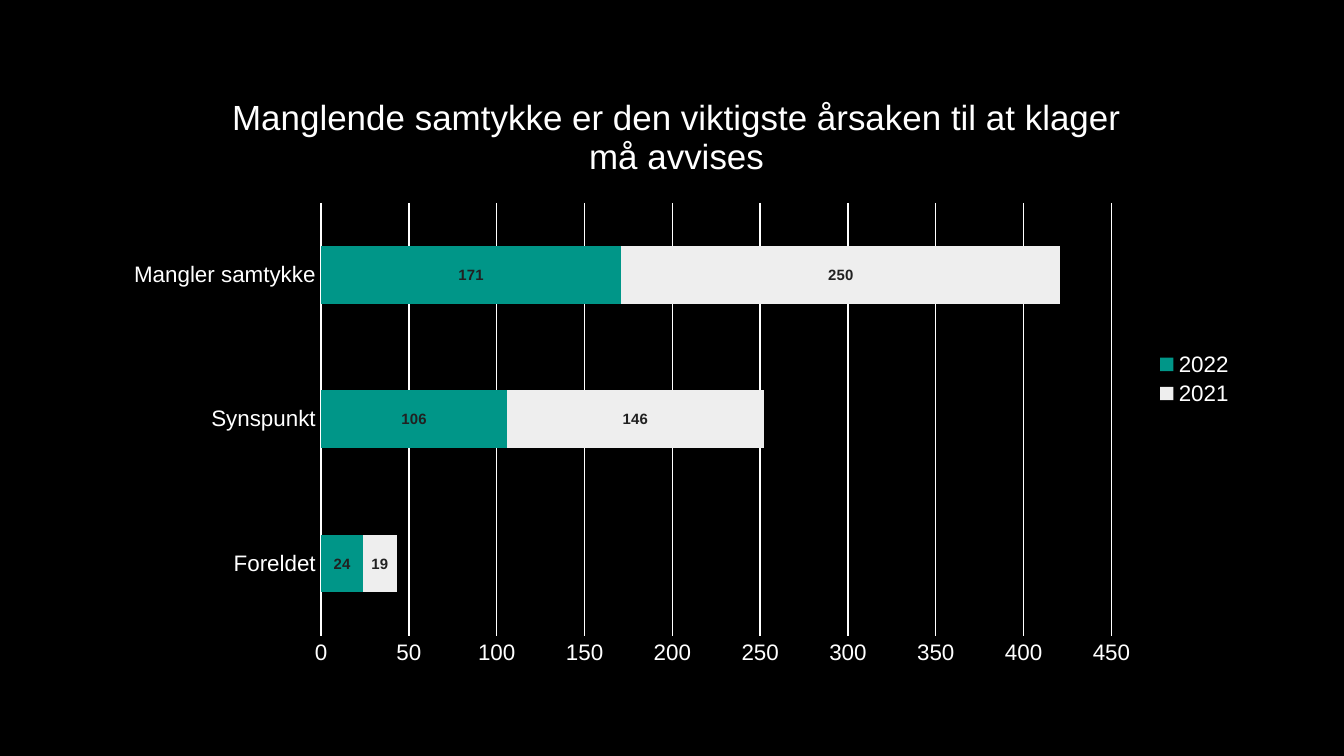
from lxml import etree
from pptx import Presentation
from pptx.chart.data import CategoryChartData
from pptx.dml.color import RGBColor
from pptx.enum.chart import XL_CHART_TYPE, XL_LABEL_POSITION, XL_LEGEND_POSITION, XL_TICK_MARK
from pptx.oxml.ns import qn
from pptx.util import Inches, Pt

STACKED_BAR = XL_CHART_TYPE.BAR_STACKED
LABEL_CENTER = XL_LABEL_POSITION.CENTER
LEGEND_RIGHT = XL_LEGEND_POSITION.RIGHT
NO_TICK = XL_TICK_MARK.NONE
FONT_NAME = "Arial"
COLORS = {
    "background": "000000",
    "text": "FFFFFF",
    "label": "212121",
    "2022": "009688",
    "2021": "EEEEEE",
}
TITLE = "Manglende samtykke er den viktigste årsaken til at klager må avvises"
CATEGORIES = ["Foreldet", "Synspunkt", "Mangler samtykke"]
COMPLAINTS = {"2022": [24, 106, 171], "2021": [19, 146, 250]}
CHART_BOX = (0.83, 0.6, 8.45, 4.44)
PLOT_BOX = (2.39, 1.51, 5.88, 3.22)
TITLE_CORNER = (1.68, 0.65)


def rgb(name):
    return RGBColor.from_string(COLORS[name])


def style_font(font, size, color="text", bold=False):
    font.name = FONT_NAME
    font.size = Pt(size)
    font.bold = bold
    font.color.rgb = rgb(color)


def style_line(line):
    line.color.rgb = rgb("text")
    line.width = Pt(0.75)


def add_complaints_chart(page):
    data = CategoryChartData()
    data.categories = CATEGORIES
    for year, counts in COMPLAINTS.items():
        data.add_series(year, counts)
    frame = page.shapes.add_chart(STACKED_BAR, *map(Inches, CHART_BOX), data)
    chart = frame.chart
    style_font(chart.font, 10)
    return chart


def place_part(part, index, box, target=None):
    layout = part.find(qn("c:layout"))
    if layout is None:
        layout = etree.Element(qn("c:layout"))
        part.insert(index, layout)
    manual = etree.SubElement(layout, qn("c:manualLayout"))
    left, top, width, height = CHART_BOX
    settings = [("layoutTarget", target)] if target else []
    settings += [("xMode", "edge"), ("yMode", "edge")]
    shares = [(box[0] - left) / width, (box[1] - top) / height]
    if len(box) == 4:
        shares += [box[2] / width, box[3] / height]
    settings += zip("xywh", shares)
    for tag, value in settings:
        etree.SubElement(manual, qn("c:" + tag)).set("val", str(value))


def add_title(chart):
    para = chart.chart_title.text_frame.paragraphs[0]
    span = para.add_run()
    span.text = TITLE
    style_font(span.font, 18.7)
    chart.chart_title.include_in_layout = False
    place_part(chart.element.find(".//" + qn("c:title")), 1, TITLE_CORNER)


def style_axes(chart):
    for axis in (chart.category_axis, chart.value_axis):
        axis.major_tick_mark = NO_TICK
        axis.minor_tick_mark = NO_TICK
        style_font(axis.tick_labels.font, 12)
    style_line(chart.category_axis.format.line)
    values = chart.value_axis
    values.minimum_scale = 0
    values.maximum_scale = 450
    values.major_unit = 50
    values.format.line.fill.background()
    values.has_major_gridlines = True
    style_line(values.major_gridlines.format.line)


def style_bars(chart):
    plot = chart.plots[0]
    plot.gap_width = 150
    plot.overlap = 100
    plot.vary_by_categories = False
    for series in plot.series:
        series.format.fill.solid()
        series.format.fill.fore_color.rgb = rgb(series.name)
        labels = series.data_labels
        labels.show_value = True
        labels.position = LABEL_CENTER
        style_font(labels.font, 8, "label", True)


def add_legend(chart):
    chart.has_legend = True
    chart.legend.position = LEGEND_RIGHT
    chart.legend.include_in_layout = False
    style_font(chart.legend.font, 12)


def main():
    deck = Presentation()
    deck.slide_width = Inches(10)
    deck.slide_height = deck.slide_width * 9 // 16
    page = deck.slides.add_slide(deck.slide_layouts[6])
    page.background.fill.solid()
    page.background.fill.fore_color.rgb = rgb("background")
    chart = add_complaints_chart(page)
    add_title(chart)
    style_axes(chart)
    style_bars(chart)
    add_legend(chart)
    place_part(chart.element.find(".//" + qn("c:plotArea")), 0, PLOT_BOX, "inner")
    deck.save("out.pptx")


if __name__ == "__main__":
    main()
